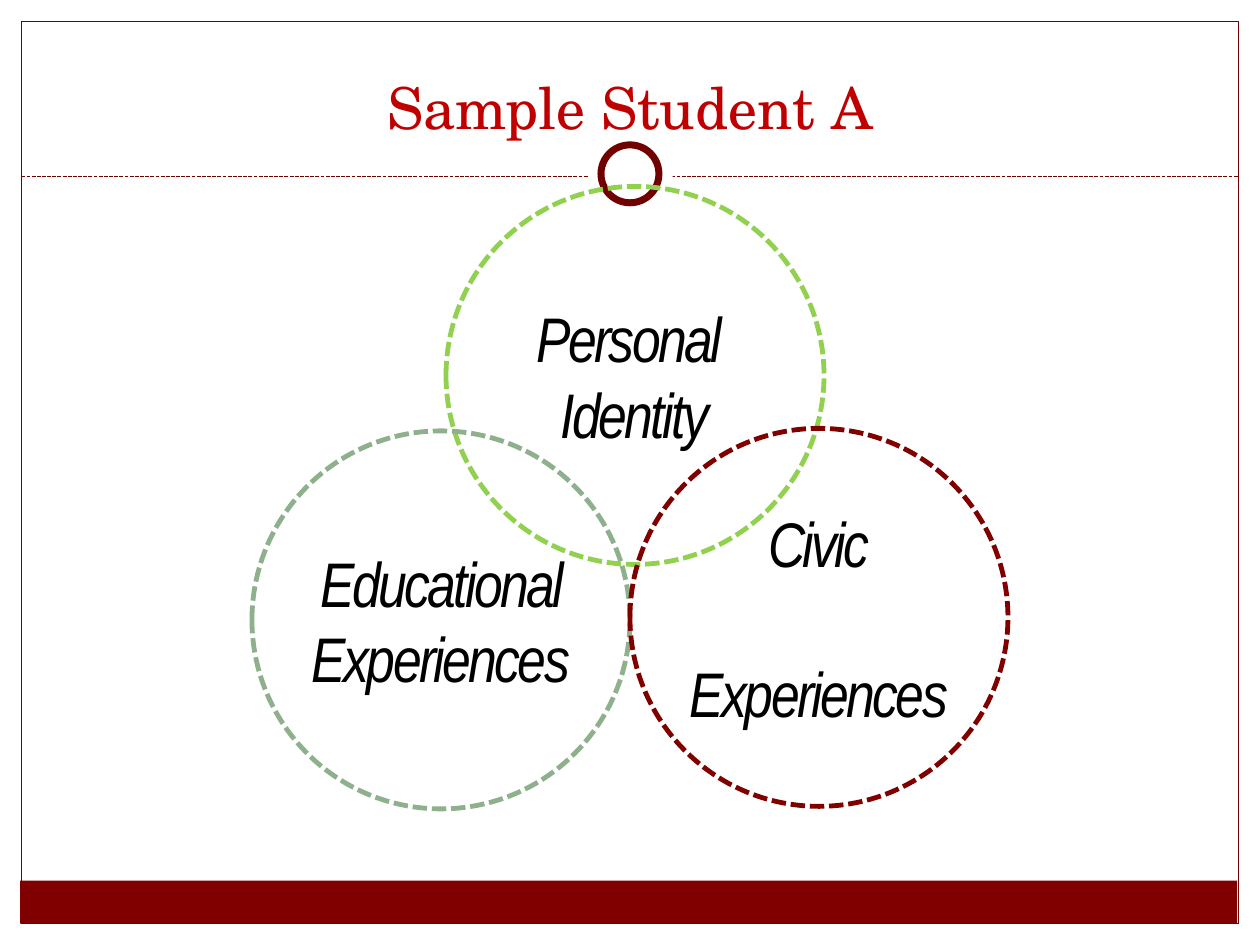
"""Build a slide with three overlapping circles of student experience."""
from lxml.etree import SubElement
from pptx import Presentation
from pptx.dml.color import RGBColor
from pptx.enum.dml import MSO_LINE
from pptx.enum.shapes import MSO_CONNECTOR, MSO_SHAPE
from pptx.enum.text import MSO_ANCHOR, PP_ALIGN
from pptx.oxml.ns import qn
from pptx.util import Inches, Pt

TITLE = "Sample Student A"
MAROON, DARK_RED, WHITE = "800000", "710000", "FFFFFF"
DIAMETER = 3
CIRCLES = [
    {"left": 3.54, "top": 1.48, "color": "92D050", "lines": ["Personal ", "Identity"], "inset": 0.1, "gap": 0},
    {"left": 2, "top": 3.42, "color": "8FB08C", "lines": ["Educational Experiences"], "inset": 0, "gap": 0},
    {"left": 5, "top": 3.4, "color": MAROON, "lines": ["Civic", "Experiences"], "inset": 0, "gap": 43},
]
FRAME = [
    (MSO_SHAPE.RECTANGLE, (0.16, 6.99, 9.66, 0.34), MAROON, None, 0),
    (MSO_SHAPE.RECTANGLE, (0.17, 0.17, 9.66, 7.16), None, DARK_RED, 0.75),
]
RING = [
    (MSO_SHAPE.OVAL, (4.67, 1.05, 0.67, 0.67), WHITE, None, 0),
    (MSO_SHAPE.OVAL, (4.77, 1.15, 0.46, 0.46), WHITE, DARK_RED, 4),
]


def rgb(value):
    return RGBColor.from_string(value)


def style_line(line, color, width, dash=None):
    line.color.rgb = rgb(color)
    line.width = Pt(width)
    if dash:
        line.dash_style = dash


def add_outline(slide, kind, box, fill, color, width, dash=None):
    shape = slide.shapes.add_shape(kind, *map(Inches, box))
    shape.shadow.inherit = False
    if fill:
        shape.fill.solid()
        shape.fill.fore_color.rgb = rgb(fill)
    else:
        shape.fill.background()
    if color:
        style_line(shape.line, color, width, dash)
    else:
        shape.line.fill.background()
    return shape


def add_divider(slide):
    divider = slide.shapes.add_connector(
        MSO_CONNECTOR.STRAIGHT, Inches(0.17), Inches(1.4), Inches(9.83), Inches(1.4))
    style_line(divider.line, DARK_RED, 0.75, MSO_LINE.SQUARE_DOT)
    SubElement(divider._element.spPr, qn("a:effectLst"))


def add_run(paragraph, text, font, size, color):
    paragraph.alignment = PP_ALIGN.CENTER
    run = paragraph.add_run()
    run.text = text
    run.font.name = font
    run.font.size = Pt(size)
    run.font.color.rgb = rgb(color)
    return run


def add_circle(slide, left, top, color, lines, inset, gap):
    box = (left, top, DIAMETER, DIAMETER)
    circle = add_outline(slide, MSO_SHAPE.OVAL, box, None, color, 2.75, MSO_LINE.SQUARE_DOT)
    frame = circle.text_frame
    frame.word_wrap = True
    frame.vertical_anchor = MSO_ANCHOR.MIDDLE
    frame.margin_left = frame.margin_right = Inches(inset)
    frame.margin_top = frame.margin_bottom = Inches(inset / 2)
    for index, text in enumerate(lines):
        paragraph = frame.add_paragraph() if index else frame.paragraphs[0]
        paragraph.space_before = Pt(gap if index else 0)
        run = add_run(paragraph, text, "Arial Narrow", 36, "000000")
        run.font.italic = True
        run.font._element.set("spc", "-150")


def add_title(slide):
    title = slide.shapes.title
    title.left, title.top, title.width, title.height = map(Inches, (0.5, 0.31, 9, 0.86))
    title.text_frame.vertical_anchor = MSO_ANCHOR.BOTTOM
    add_run(title.text_frame.paragraphs[0], TITLE, "TeX Gyre Schola", 33, "C00000")


def main():
    presentation = Presentation()
    presentation.slide_width, presentation.slide_height = Inches(10), Inches(7.5)
    slide = presentation.slides.add_slide(presentation.slide_layouts[5])
    add_title(slide)
    for part in FRAME:
        add_outline(slide, *part)
    add_divider(slide)
    for part in RING:
        add_outline(slide, *part)
    for circle in CIRCLES:
        add_circle(slide, **circle)
    presentation.save("out.pptx")


if __name__ == "__main__":
    main()
